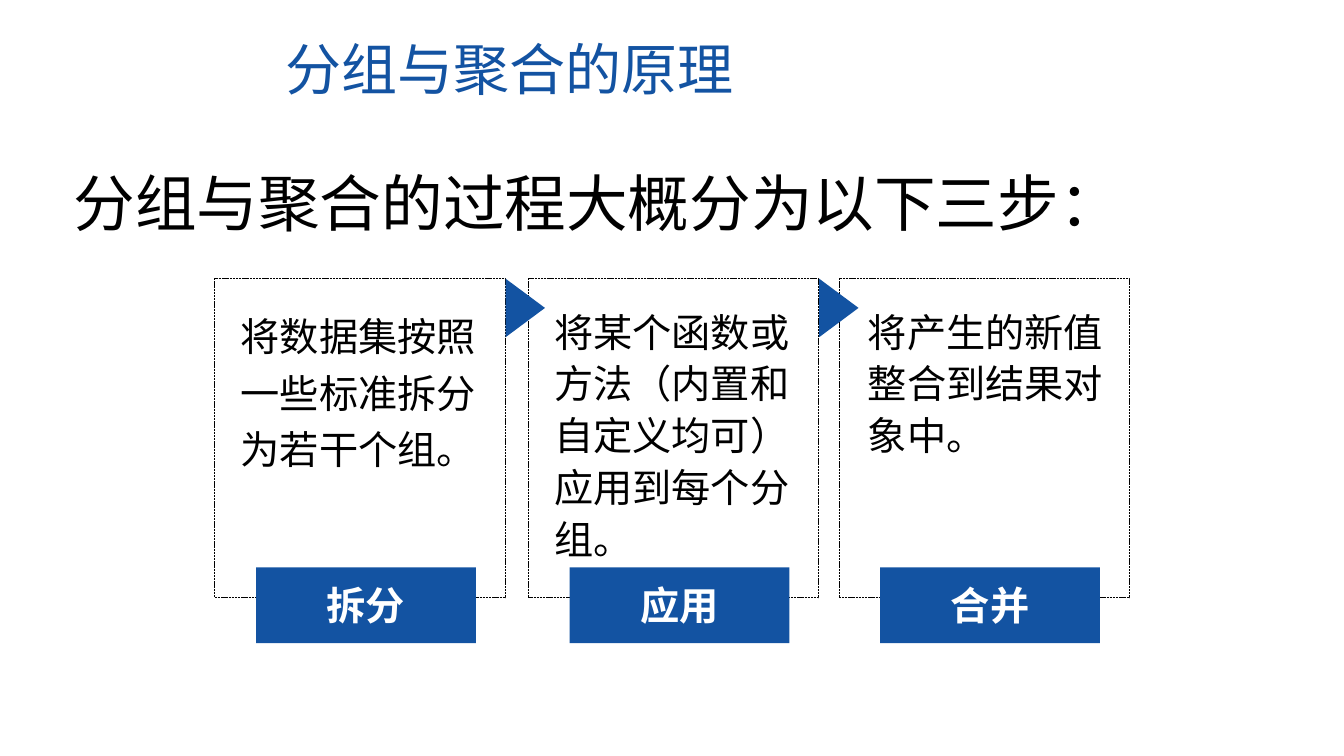
import pptx
import pptx.dml.color
import pptx.enum.dml
import pptx.enum.shapes
import pptx.enum.text
import pptx.oxml.ns
import pptx.util
from lxml import etree

Inches = pptx.util.Inches
Shape = pptx.enum.shapes.MSO_SHAPE
Align = pptx.enum.text.PP_ALIGN
Anchor = pptx.enum.text.MSO_ANCHOR

BLUE = pptx.dml.color.RGBColor(0x13, 0x53, 0xA2)
BLACK = pptx.dml.color.RGBColor(0, 0, 0)
WHITE = pptx.dml.color.RGBColor(0xFF, 0xFF, 0xFF)


class StepSlide:
    font_name = "Noto Sans CJK SC"

    def __init__(self, deck):
        self.slide = deck.slides.add_slide(deck.slide_layouts[5])

    def set_text(self, frame, wording, size, color, bold=False,
                 align=Align.LEFT, anchor=Anchor.TOP, spacing=1.0):
        frame.word_wrap = True
        frame.auto_size = pptx.enum.text.MSO_AUTO_SIZE.NONE
        frame.vertical_anchor = anchor
        paragraph = frame.paragraphs[0]
        paragraph.alignment = align
        paragraph.line_spacing = spacing
        run = paragraph.add_run()
        run.text = wording
        run.font.name = self.font_name
        run.font.size = pptx.util.Pt(size)
        run.font.bold = bold
        run.font.color.rgb = color
        east_asian = etree.SubElement(run.font._element, pptx.oxml.ns.qn("a:ea"))
        east_asian.set("typeface", self.font_name)

    def title(self, wording, left, top, width, height):
        heading = self.slide.shapes.title
        heading.left, heading.top = Inches(left), Inches(top)
        heading.width, heading.height = Inches(width), Inches(height)
        self.set_text(heading.text_frame, wording, 40, BLUE)

    def text(self, wording, left, top, width, height, size, spacing):
        passage = self.slide.shapes.add_textbox(
            Inches(left), Inches(top), Inches(width), Inches(height))
        self.set_text(passage.text_frame, wording, size, BLACK, spacing=spacing)

    def shape(self, kind, left, top, width, height):
        figure = self.slide.shapes.add_shape(
            kind, Inches(left), Inches(top), Inches(width), Inches(height))
        figure.shadow.inherit = False
        return figure

    def frame(self, left, top, width, height):
        outline = self.shape(Shape.RECTANGLE, left, top, width, height)
        outline.fill.background()
        outline.line.color.rgb = BLACK
        outline.line.width = pptx.util.Pt(0.5)
        outline.line.dash_style = pptx.enum.dml.MSO_LINE.SQUARE_DOT

    def solid(self, kind, left, top, width, height):
        figure = self.shape(kind, left, top, width, height)
        figure.fill.solid()
        figure.fill.fore_color.rgb = BLUE
        figure.line.fill.background()
        return figure

    def label(self, wording, left, top, width, height):
        plate = self.solid(Shape.RECTANGLE, left, top, width, height)
        self.set_text(plate.text_frame, wording, 28, WHITE, bold=True,
                      align=Align.CENTER, anchor=Anchor.MIDDLE)

    def pointer(self, left, top):
        triangle = self.solid(Shape.FLOWCHART_EXTRACT, left, top, 0.58, 0.39)
        triangle.rotation = 90


def main():
    deck = pptx.Presentation()
    deck.slide_width, deck.slide_height = Inches(13.33), Inches(7.5)
    page = StepSlide(deck)
    page.title("分组与聚合的原理", 2.73, 0.29, 5.88, 0.77)
    page.text("分组与聚合的过程大概分为以下三步：", 0.63, 1.44, 12.02, 0.91, 44, 1.2)

    steps = [
        (2.13, "拆分", "将数据集按照一些标准拆分为若干个组。", 2.29, 1.72, 1.2),
        (5.24, "应用", "将某个函数或方法（内置和自定义均可）应用到每个分组。", 5.4, 2.69, 1.1),
        (8.32, "合并", "将产生的新值整合到结果对象中。", 8.51, 1.66, 1.1),
    ]
    for left, name, detail, detail_left, detail_height, spacing in steps:
        page.frame(left, 2.76, 2.88, 3.17)
        page.label(name, left + 0.41, 5.63, 2.18, 0.75)
        page.text(detail, detail_left, 2.96, 2.88, detail_height, 28, spacing)
    for left, *_ in steps[:-1]:
        page.pointer(left + 2.79, 2.86)

    deck.save("out.pptx")


if __name__ == "__main__":
    main()
